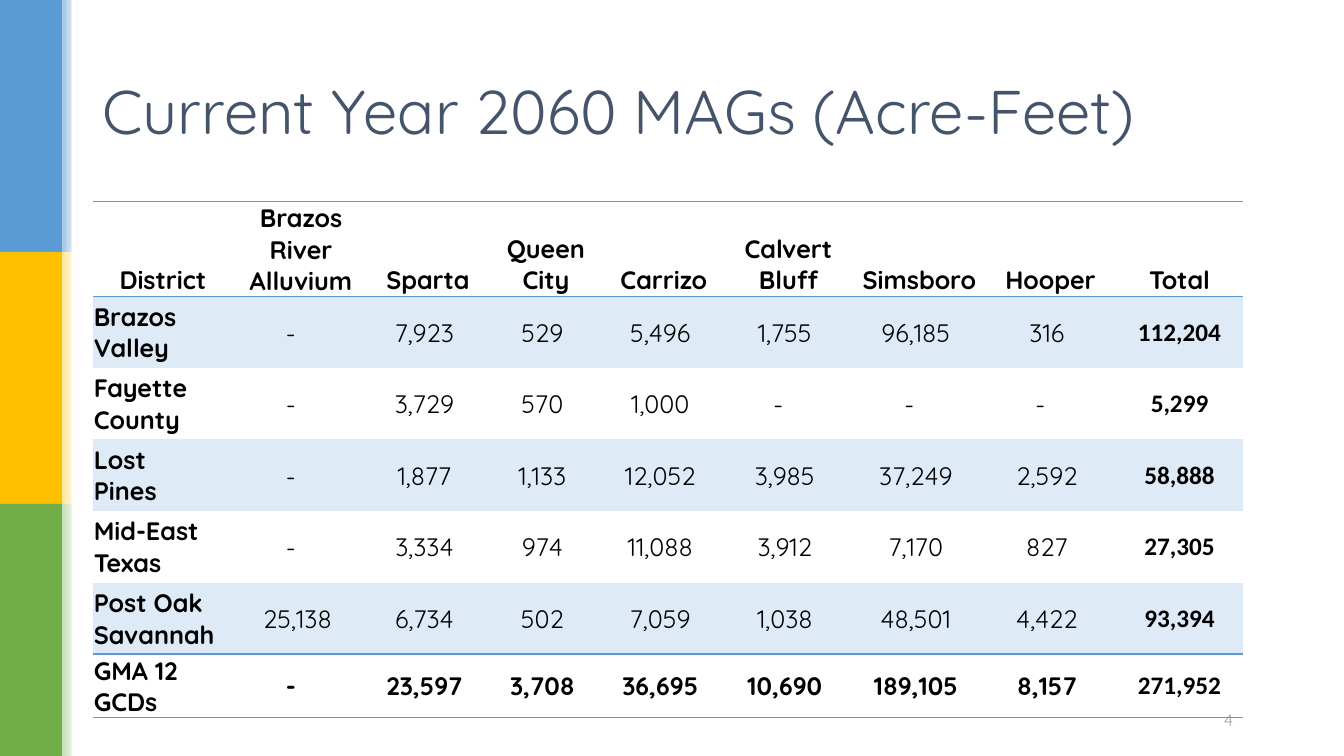
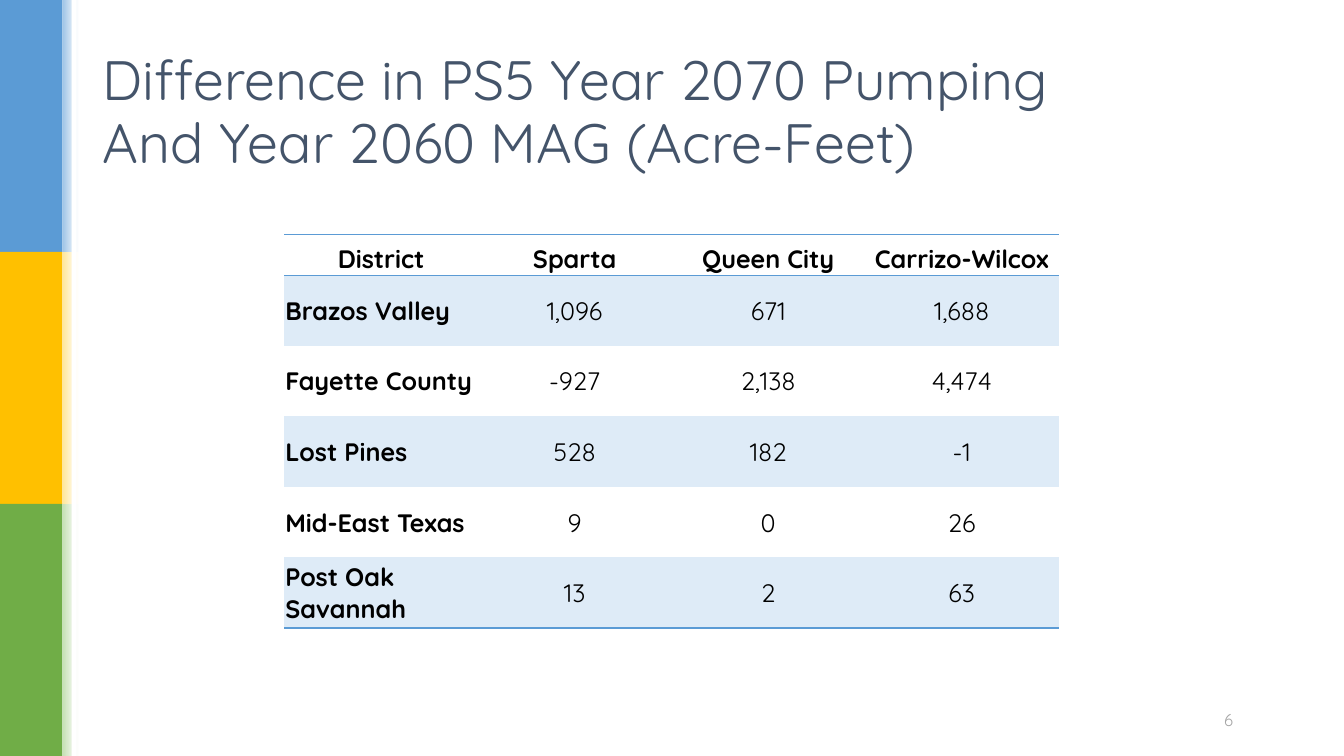
from pptx import Presentation
from pptx.dml.color import RGBColor
from pptx.enum.shapes import MSO_SHAPE
from pptx.enum.text import MSO_ANCHOR as ANCHOR, PP_ALIGN as ALIGN
from pptx.oxml import parse_xml
from pptx.oxml.ns import nsdecls, qn
from pptx.util import Pt

PX = 9144  # 100 px to the inch
FONT = "Quicksand"
TOTAL_FONT = "Calibri"
PLAIN_TABLE = "{2D5ABB26-0587-4C30-8999-92F81FD0307C}"
COLORS = {
    "blue": "5B9BD5", "yellow": "FFC000", "green": "70AD47",
    "light_blue": "9DC3E6", "light_yellow": "FFE699", "light_green": "C5E0B4",
    "row": "DEEBF7", "title": "44546A", "number": "A5A5A5",
    "white": "FFFFFF", "black": "000000",
}

SLIDES = [
    {
        "title": "Current Year 2060 MAGs (Acre-Feet)", "size": 44, "number": "4",
        "left": 92, "top": 200,
        "cols": [139, 135, 117, 117, 117, 130, 130, 130, 126],
        "heights": [94] + [71] * 5 + [63],
        "rules": {0: "BT", 6: "BT"},
        "totals": True,
        "rows": [
            ["District", "Brazos River Alluvium", "Sparta", "Queen City", "Carrizo",
             "Calvert Bluff", "Simsboro", "Hooper", "Total"],
            ["Brazos Valley", "-", "7,923", "529", "5,496", "1,755", "96,185", "316", "112,204"],
            ["Fayette County", "-", "3,729", "570", "1,000", "-", "-", "-", "5,299"],
            ["Lost\nPines", "-", "1,877", "1,133", "12,052", "3,985", "37,249", "2,592", "58,888"],
            ["Mid-East Texas", "-", "3,334", "974", "11,088", "3,912", "7,170", "827", "27,305"],
            ["Post Oak Savannah", "25,138", "6,734", "502", "7,059", "1,038", "48,501", "4,422",
             "93,394"],
            ["GMA 12 GCDs", "-", "23,597", "3,708", "36,695", "10,690", "189,105", "8,157",
             "271,952"],
        ],
    },
    {
        "title": "Difference in PS5 Year 2070 Pumping\vAnd Year 2060 MAG (Acre-Feet)",
        "size": 39.6, "number": "6",
        "left": 282, "top": 233,
        "cols": [192] * 4,
        "heights": [40] + [70] * 5,
        "rules": {0: "BT", 5: "B"},
        "totals": False,
        "rows": [
            ["District", "Sparta", "Queen City", "Carrizo-Wilcox"],
            ["Brazos Valley", "1,096", "671", "1,688"],
            ["Fayette County", "-927", "2,138", "4,474"],
            ["Lost Pines", "528", "182", "-1"],
            ["Mid-East Texas", "9", "0", "26"],
            ["Post Oak Savannah", "13", "2", "63"],
        ],
    },
]


def style_text(tf, size, color, align=ALIGN.LEFT, bold=False, font=FONT):
    for p in tf.paragraphs:
        p.alignment = align
        for r in p.runs:
            r.font.name = font
            r.font.size = Pt(size)
            r.font.bold = bold
            r.font.color.rgb = RGBColor.from_string(COLORS[color])


def add_bar(s, x, y, w, h, color, fade_from=None):
    """Add a borderless bar; fade_from makes it a fade from that colour to color."""
    bar = s.shapes.add_shape(MSO_SHAPE.RECTANGLE, x * PX, y * PX, w * PX, h * PX)
    bar.shadow.inherit = False
    bar.line.fill.background()
    if fade_from:
        bar.fill.gradient()
        bar.fill.gradient_angle = 0
        for stop, name, position in zip(bar.fill.gradient_stops, (fade_from, color), (0, 1)):
            stop.color.rgb = RGBColor.from_string(COLORS[name])
            stop.position = position
    else:
        bar.fill.solid()
        bar.fill.fore_color.rgb = RGBColor.from_string(COLORS[color])


prs = Presentation()
prs.slide_width, prs.slide_height = 1333 * PX, 750 * PX

for page in SLIDES:
    s = prs.slides.add_slide(prs.slide_layouts[6])

    # Side bands
    for i, name in enumerate(("blue", "yellow", "green")):
        add_bar(s, 0, i * 250, 62, 250, name)
        add_bar(s, 62, i * 250, 16, 250, "white", fade_from="light_" + name)
    add_bar(s, 71, 0, 5, 750, "white")

    # Title and slide number
    for text, box, size, color, align in (
        (page["title"], (92, 40, 1150, 145), page["size"], "title", ALIGN.LEFT),
        (page["number"], (883, 695, 350, 40), 12, "number", ALIGN.RIGHT),
    ):
        tf = s.shapes.add_textbox(*(v * PX for v in box)).text_frame
        tf.word_wrap = True
        tf.vertical_anchor = ANCHOR.MIDDLE
        tf.text = text
        tf.paragraphs[0].line_spacing = 0.95
        style_text(tf, size, color, align)

    # Table
    rows, cols, heights = page["rows"], page["cols"], page["heights"]
    frame = s.shapes.add_table(len(rows), len(cols), page["left"] * PX, page["top"] * PX,
                               sum(cols) * PX, sum(heights) * PX)
    for style_id in frame.element.iter(qn("a:tableStyleId")):
        style_id.text = PLAIN_TABLE
    table = frame.table
    table.first_row = table.horz_banding = False
    for column, width in zip(table.columns, cols):
        column.width = width * PX
    for row, height in zip(table.rows, heights):
        row.height = height * PX

    for i, values in enumerate(rows):
        for j, value in enumerate(values):
            header, label = i == 0, j == 0
            total_col = page["totals"] and j == len(cols) - 1
            total_row = page["totals"] and i == len(rows) - 1
            cell = table.cell(i, j)
            cell.text = value
            cell.vertical_anchor = ANCHOR.BOTTOM if header else ANCHOR.MIDDLE
            cell.margin_left = cell.margin_top = cell.margin_right = PX
            cell.margin_bottom = 0
            if page["totals"] and not (header or label or total_col):
                cell.margin_right = (21 if value == "-" else 8) * PX
            style_text(cell.text_frame, 18, "black",
                       ALIGN.LEFT if label and not header else ALIGN.CENTER,
                       header or label or total_col or total_row,
                       TOTAL_FONT if total_col and not header else FONT)
            if i % 2:
                cell.fill.solid()
                cell.fill.fore_color.rgb = RGBColor.from_string(COLORS["row"])
            else:
                cell.fill.background()
            for side in page["rules"].get(i, ""):
                cell._tc.get_or_add_tcPr().insert(0, parse_xml(
                    f'<a:ln{side} {nsdecls("a")} w="{Pt(1)}"><a:solidFill>'
                    f'<a:srgbClr val="{COLORS["blue"]}"/></a:solidFill></a:ln{side}>'))

prs.save("out.pptx")
